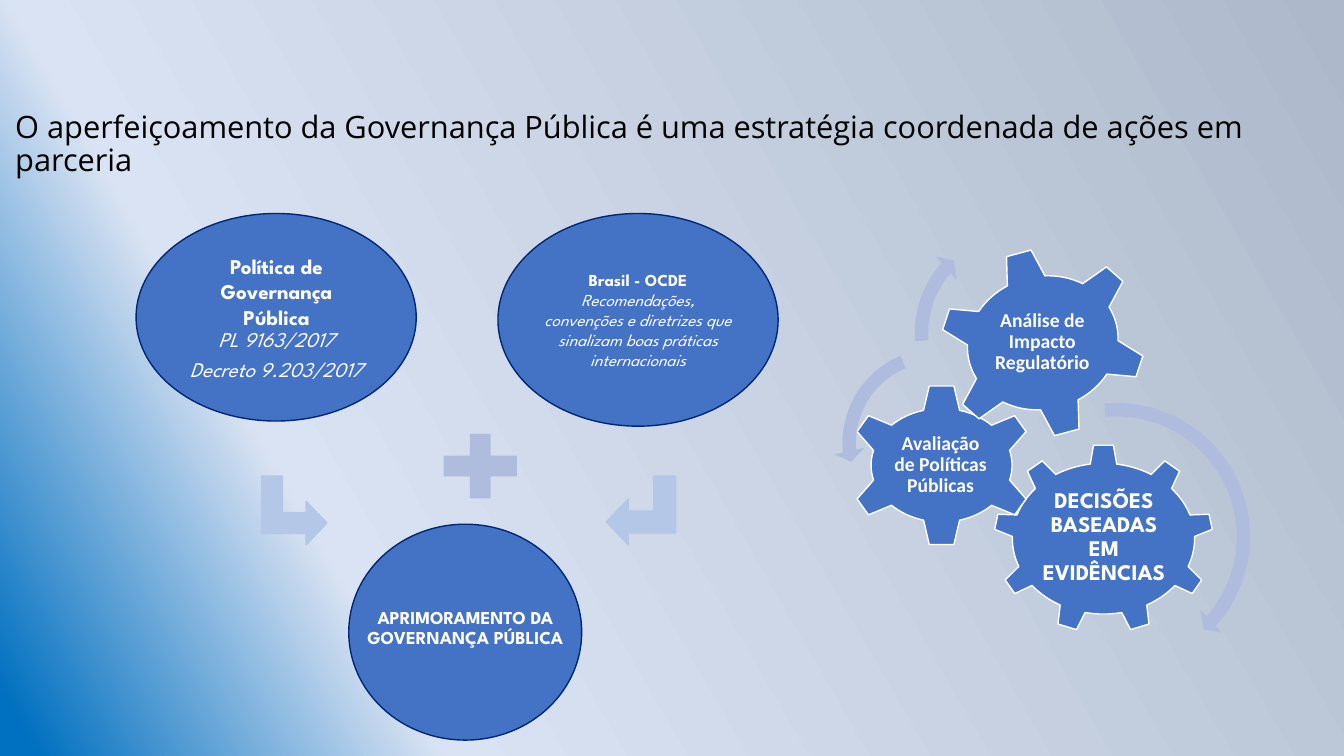
"""Build the slide on improving public governance through coordinated action."""
from copy import deepcopy

from pptx import Presentation
from pptx import util as u
from pptx.dml.color import RGBColor
from pptx.enum import shapes, text
from pptx.oxml.ns import qn

BLUE = RGBColor(0x44, 0x72, 0xC4)
NAVY = RGBColor(0x00, 0x27, 0x76)
LILAC = RGBColor(0xB0, 0xBC, 0xDE)
PALE = RGBColor(0xB4, 0xC7, 0xE7)
WHITE = RGBColor(0xFF, 0xFF, 0xFF)
BLACK = RGBColor(0, 0, 0)
BACKGROUND = [(0, RGBColor(0xAD, 0xB9, 0xCA)), (0.75, RGBColor(0xDA, 0xE3, 0xF3)),
              (0.98, RGBColor(0x00, 0x70, 0xC0))]
SPARTAN = "League Spartan"
KIND = shapes.MSO_SHAPE


def cm(box):
    return [u.Cm(v) for v in box]


def set_background(s):
    fill = s.background.fill
    fill.gradient()
    fill.gradient_angle = 210
    stops = s._element.find(".//" + qn("a:gsLst"))
    stops.append(deepcopy(stops[-1]))
    for stop, (position, color) in zip(fill.gradient_stops, BACKGROUND):
        stop.position = position
        stop.color.rgb = color


def set_title(s, wording):
    sp = s.shapes.title
    sp.left, sp.top, sp.width, sp.height = cm((0.13, 2.41, 33.2, 2.82))
    tf = sp.text_frame
    tf.text = wording
    tf.word_wrap = True
    tf.auto_size = text.MSO_AUTO_SIZE.NONE
    tf.vertical_anchor = text.MSO_ANCHOR.MIDDLE
    tf.margin_bottom = u.Cm(0.45)
    p = tf.paragraphs[0]
    p.alignment = text.PP_ALIGN.LEFT
    p.line_spacing = 0.9
    p.font.name, p.font.size = "Open Sans", u.Pt(22)
    p.font.color.rgb = BLACK


def add_figure(s, kind, box, fill, line=None, adjustments=(), rotation=0):
    sp = s.shapes.add_shape(kind, *cm(box))
    sp.shadow.inherit = False
    sp.rotation = rotation
    sp.fill.solid()
    sp.fill.fore_color.rgb = fill
    if line is None:
        sp.line.fill.background()
    else:
        sp.line.color.rgb = line
        sp.line.width = u.Pt(1)
    for i, value in enumerate(adjustments):
        sp.adjustments[i] = value
    return sp


def add_label(s, box, paragraphs, size, font=SPARTAN):
    """Add centred text; each paragraph is (line spacing, runs), each run (wording, is_bold)."""
    tf = s.shapes.add_textbox(*cm(box)).text_frame
    tf.word_wrap = True
    tf.vertical_anchor = text.MSO_ANCHOR.MIDDLE
    tf.margin_left = tf.margin_right = tf.margin_top = tf.margin_bottom = u.Cm(0.06)
    for i, (spacing, runs) in enumerate(paragraphs):
        p = tf.add_paragraph() if i else tf.paragraphs[0]
        p.alignment = text.PP_ALIGN.CENTER
        p.line_spacing = spacing
        p.space_after = u.Pt(size * 0.35 if spacing < 1 else 0)
        p.font.name, p.font.size = font, u.Pt(size)
        p.font.color.rgb = WHITE
        for wording, is_bold in runs:
            r = p.add_run()
            r.text = wording
            r.font.bold, r.font.italic = is_bold, not is_bold


def add_ellipses(s):
    for box in ((3.43, 5.38, 7.06, 5.23), (12.55, 5.38, 7.06, 5.36), (8.79, 13.21, 5.87, 5.44)):
        add_figure(s, KIND.OVAL, box, BLUE, NAVY)
    add_label(s, (4.62, 6.32, 4.7, 3.38),
              [(1.0, [("Política de Governança Pública", True)]),
               (0.9, [("PL 9163/2017", False)]),
               (0.9, [("Decreto 9.203/2017", False)])], 15)
    add_label(s, (13.59, 6.17, 4.98, 3.78),
              [(1.0, [("Brasil - OCDE", True),
                      (" Recomendações, convenções e diretrizes que sinalizam "
                       "boas práticas internacionais", False)])], 12)
    add_label(s, (8.79, 14.17, 5.87, 3.33),
              [(0.9, [("APRIMORAMENTO DA GOVERNANÇA PÚBLICA", True)])], 13)


def add_joining_signs(s):
    add_figure(s, KIND.MATH_PLUS, (10.85, 10.64, 2.51, 2.21), LILAC)
    bends = [add_figure(s, KIND.BENT_UP_ARROW, box, PALE, PALE, (0.319, 0.333, 0.319), 90)
             for box in ((6.55, 12.04, 1.73, 1.65), (15.29, 11.99, 1.73, 1.75))]
    bends[1]._element.spPr.xfrm.set("flipV", "1")


def add_gears(s):
    gears = [
        (KIND.GEAR_9, (25.04, 11.2, 5.54, 4.75), 0, (26.11, 12.32, 3.43, 2.44),
         "DECISÕES BASEADAS EM EVIDÊNCIAS", 16, SPARTAN),
        (KIND.GEAR_6, (21.34, 9.68, 4.78, 4.09), 0, (22.45, 10.72, 2.51, 2.01),
         "Avaliação de Políticas Públicas", 14, "Calibri"),
        (KIND.GEAR_6, (23.65, 6.25, 5.26, 4.78), 345, (24.82, 7.26, 2.9, 2.74),
         "Análise de Impacto Regulatório", 14, "Calibri"),
    ]
    for kind, box, rotation, label_box, wording, size, font in gears:
        add_figure(s, kind, box, BLUE, WHITE, rotation=rotation)
        add_label(s, label_box, [(0.9, [(wording, True)])], size, font)
    turns = [
        (KIND.CIRCULAR_ARROW, (24.54, 9.93, 7.19, 7.19), (0.047, 2.99, 25.024, 158.912, 0.055)),
        (KIND.LEFT_CIRCULAR_ARROW, (21.01, 8.56, 5.21, 5.21),
         (0.065, 4.3, 104.891, 148.378, 0.075)),
        (KIND.CIRCULAR_ARROW, (22.83, 5.56, 5.64, 5.64), (0.06, 3.941, 133.138, 105.082, 0.07)),
    ]
    for kind, box, adjustments in turns:
        add_figure(s, kind, box, LILAC, adjustments=adjustments)


def main():
    prs = Presentation()
    prs.slide_width, prs.slide_height = u.Cm(33.87), u.Cm(19.05)
    s = prs.slides.add_slide(prs.slide_layouts[5])
    set_background(s)
    set_title(s, "O aperfeiçoamento da Governança Pública é uma estratégia "
                 "coordenada de ações em parceria")
    add_ellipses(s)
    add_joining_signs(s)
    add_gears(s)
    prs.save("out.pptx")


if __name__ == "__main__":
    main()
